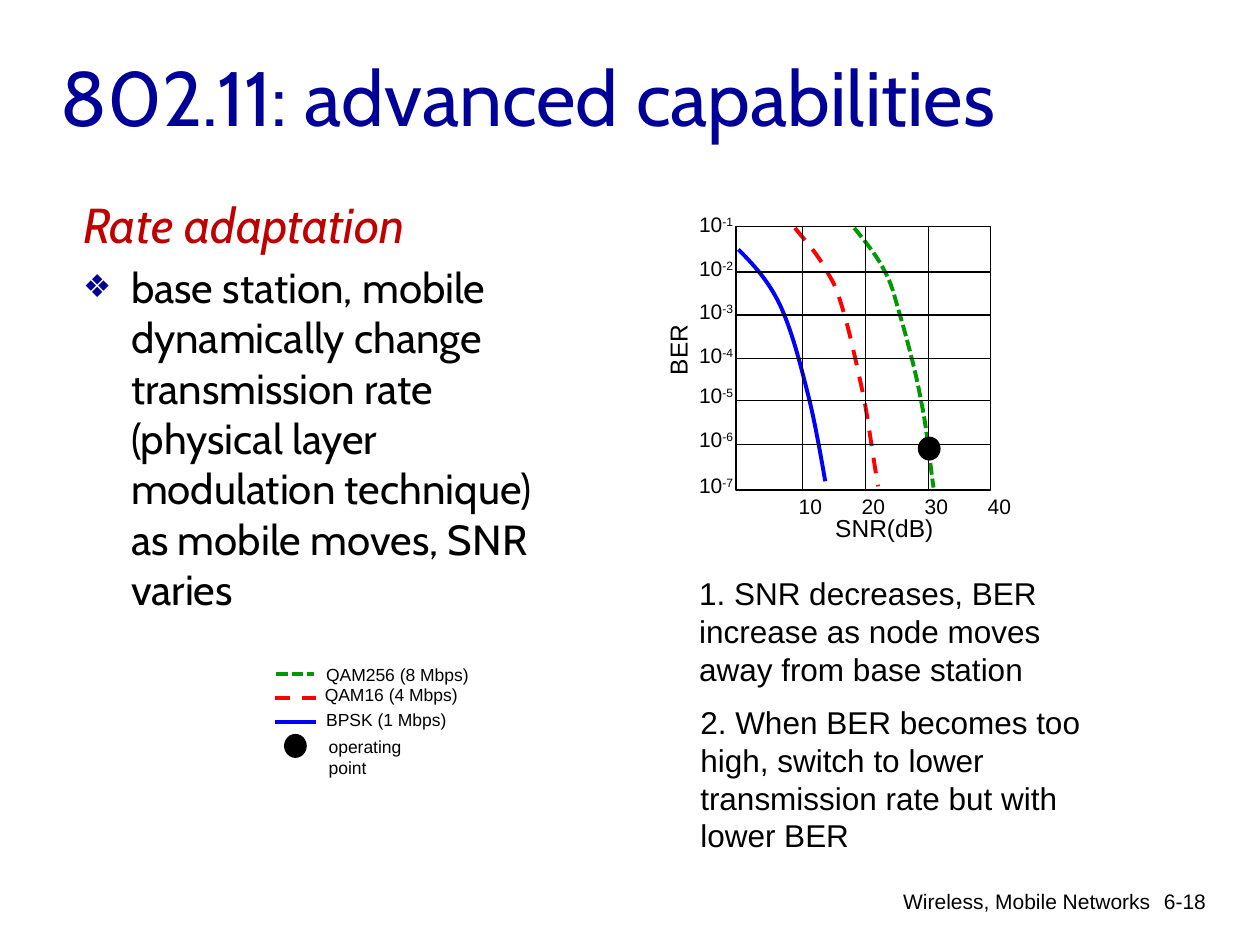
from dataclasses import dataclass

from lxml.etree import SubElement
from pptx import Presentation
from pptx.dml.color import RGBColor
from pptx.enum.dml import MSO_LINE_DASH_STYLE as Dash
from pptx.enum.shapes import MSO_CONNECTOR as Link, MSO_SHAPE as Kind
from pptx.enum.text import MSO_ANCHOR as Anchor, MSO_AUTO_SIZE as Fit, PP_ALIGN as Align
from pptx.oxml.ns import qn
from pptx.util import Pt

SCALE = 9144
HUES = {
    "ink": "000000",
    "navy": "000099",
    "crimson": "C00000",
    "blue": "0000FF",
    "red": "FF0000",
    "green": "009900",
}


@dataclass
class Box:
    left: int
    top: int
    width: int
    height: int

    def emu(self) -> list[int]:
        return [px(n) for n in (self.left, self.top, self.width, self.height)]


@dataclass
class Curve:
    hue: str
    dash: Dash
    points: list[tuple[int, int]]
    key: tuple[int, int, int]
    label: str
    spot: Box


@dataclass
class Note:
    text: str
    box: Box
    size: int
    wrap: bool = False
    align: Align = Align.LEFT
    fit: Fit = Fit.SHAPE_TO_FIT_TEXT
    power: str = ""
    turn: int = 0


CURVES = [
    Curve("blue", Dash.SOLID,
          [(586, 198), (598, 210), (610, 223), (619, 242), (628, 261), (635, 288),
           (641, 312), (647, 335), (653, 371), (655, 382)],
          (218, 251, 573), "BPSK (1 Mbps)", Box(249, 558, 115, 27)),
    Curve("red", Dash.DASH,
          [(631, 181), (640, 192), (650, 203), (656, 215), (663, 226), (665, 232),
           (670, 249), (675, 266), (681, 294), (686, 317), (690, 340), (693, 363),
           (697, 386)],
          (218, 251, 554), "QAM16 (4 Mbps)", Box(248, 538, 126, 27)),
    Curve("green", Dash.SQUARE_DOT,
          [(678, 181), (687, 192), (696, 203), (702, 215), (708, 226), (709, 232),
           (714, 249), (719, 266), (727, 295), (731, 318), (736, 341), (739, 376),
           (741, 387)],
          (219, 249, 535), "QAM256 (8 Mbps)", Box(249, 522, 133, 27)),
]
PLOT = Box(584, 180, 202, 209)
ROWS = (216, 250, 285, 318, 353)
MID = 285
COLS = (637, 687, 737)
TICKS = (163, 198, 232, 267, 299, 334, 370)
DOTS = (Box(729, 347, 17, 18), Box(226, 583, 17, 18))
NOTES = [
    Note("Wireless, Mobile Networks", Box(501, 700, 422, 35), 12, True, Align.RIGHT, Fit.NONE),
    Note("6-18", Box(893, 700, 74, 50), 12, True, Align.RIGHT, Fit.NONE),
    Note("SNR(dB)", Box(653, 402, 98, 33), 14),
    Note("BER", Box(508, 261, 60, 33), 14, turn=270),
    Note("operating point", Box(251, 579, 111, 27), 10),
    Note("1. SNR decreases, BER increase as node moves away from base station",
         Box(545, 451, 350, 100), 18, True),
    Note("2. When BER becomes too high, switch to lower transmission rate but with lower BER",
         Box(546, 553, 350, 130), 18, True),
]


def px(n: int) -> int:
    return n * SCALE


def tint(name: str) -> RGBColor:
    return RGBColor.from_string(HUES[name])


def style(para, face: str, size: int, hue: str, slant: bool = False) -> None:
    font = para.font
    font.name, font.size, font.italic = face, Pt(size), slant
    font.color.rgb = tint(hue)


def place(shape, box: Box) -> None:
    shape.left, shape.top, shape.width, shape.height = box.emu()


def stroke(shape, hue: str, width: float, dash: Dash = Dash.SOLID) -> None:
    shape.line.color.rgb = tint(hue)
    shape.line.width = Pt(width)
    shape.line.dash_style = dash


def write(shapes, note: Note) -> None:
    item = shapes.add_textbox(*note.box.emu())
    item.rotation = note.turn
    frame = item.text_frame
    frame.word_wrap, frame.auto_size = note.wrap, note.fit
    para = frame.paragraphs[0]
    para.alignment = note.align
    para.add_run().text = note.text
    style(para, "Arial", note.size, "ink")
    if note.power:
        run = para.add_run()
        run.text = note.power
        run._r.get_or_add_rPr().set("baseline", "30000")


def rule(shapes, start: tuple[int, int], end: tuple[int, int], hue: str = "ink",
         width: float = 0.75, dash: Dash = Dash.SOLID):
    line = shapes.add_connector(Link.STRAIGHT, *map(px, start + end))
    stroke(line, hue, width, dash)
    SubElement(line.element.spPr, qn("a:effectLst"))
    return line


def bend(shapes, curve: Curve) -> None:
    first, *rest = curve.points
    pen = shapes.build_freeform(*first, scale=SCALE)
    pen.add_line_segments(rest, close=False)
    shape = pen.convert_to_shape()
    shape.fill.background()
    shape.shadow.inherit = False
    stroke(shape, curve.hue, 2.25, curve.dash)
    track = next(shape.element.iter(qn("a:path")))
    legs = track.findall(qn("a:lnTo"))
    for i in range(0, len(legs), 3):
        arc = SubElement(track, qn("a:cubicBezTo"))
        for leg in legs[i:i + 3]:
            arc.append(leg[0])
            track.remove(leg)


def form(shapes, kind: Kind, box: Box, solid: bool):
    shape = shapes.add_shape(kind, *box.emu())
    shape.shadow.inherit = False
    if solid:
        shape.fill.solid()
        shape.fill.fore_color.rgb = tint("ink")
    else:
        shape.fill.background()
    stroke(shape, "ink", 0.75)
    return shape


def head(title) -> None:
    place(title, Box(38, 30, 850, 92))
    frame = title.text_frame
    frame.text = "802.11: advanced capabilities"
    frame.auto_size, frame.vertical_anchor = Fit.NONE, Anchor.MIDDLE
    para = frame.paragraphs[0]
    para.alignment = Align.LEFT
    style(para, "Cabin", 44, "navy")


def list_out(body) -> None:
    place(body, Box(56, 149, 410, 508))
    frame = body.text_frame
    frame.text = ("Rate adaptation\nbase station, mobile dynamically change transmission rate "
                  "(physical layer modulation technique) as mobile moves, SNR varies")
    frame.auto_size = Fit.NONE
    top, point = frame.paragraphs
    for para in (top, point):
        props = para._p.get_or_add_pPr()
        props.set("marL", str(px(38)))
        props.set("indent", str(px(-38)))
    SubElement(top._p.pPr, qn("a:buNone"))
    props = point._p.pPr
    SubElement(SubElement(props, qn("a:buClr")), qn("a:srgbClr"), val=HUES["navy"])
    SubElement(props, qn("a:buSzPct"), val="75000")
    SubElement(props, qn("a:buChar"), char="❖")
    style(top, "Cabin", 28, "crimson", True)
    style(point, "Cabin", 24, "ink")


def graph(shapes) -> None:
    for curve in CURVES:
        bend(shapes, curve)
        left, right, y = curve.key
        rule(shapes, (left, y), (right, y), curve.hue, 2.25, curve.dash)
        write(shapes, Note(curve.label, curve.spot, 10))
    frame = form(shapes, Kind.RECTANGLE, PLOT, False)
    for y in ROWS:
        line = rule(shapes, (PLOT.left, y), (PLOT.left + PLOT.width, y))
        if y == MID:
            line.begin_connect(frame, 1)
            line.end_connect(frame, 3)
    for x in COLS:
        rule(shapes, (x, PLOT.top), (x, PLOT.top + PLOT.height))
    for i in range(4):
        write(shapes, Note(str(10 * i + 10), Box(624 + 50 * i, 387, 39, 30), 12))
    for i, y in enumerate(TICKS, 1):
        write(shapes, Note("10", Box(545, y, 48, 30), 12, power=f"-{i}"))
    for dot in DOTS:
        form(shapes, Kind.OVAL, dot, True)


def main() -> None:
    deck = Presentation()
    deck.slide_width, deck.slide_height = px(1000), px(750)
    slide = deck.slides.add_slide(deck.slide_layouts[1])
    head(slide.shapes.title)
    list_out(slide.placeholders[1])
    graph(slide.shapes)
    for note in NOTES:
        write(slide.shapes, note)
    deck.save("out.pptx")


if __name__ == "__main__":
    main()
